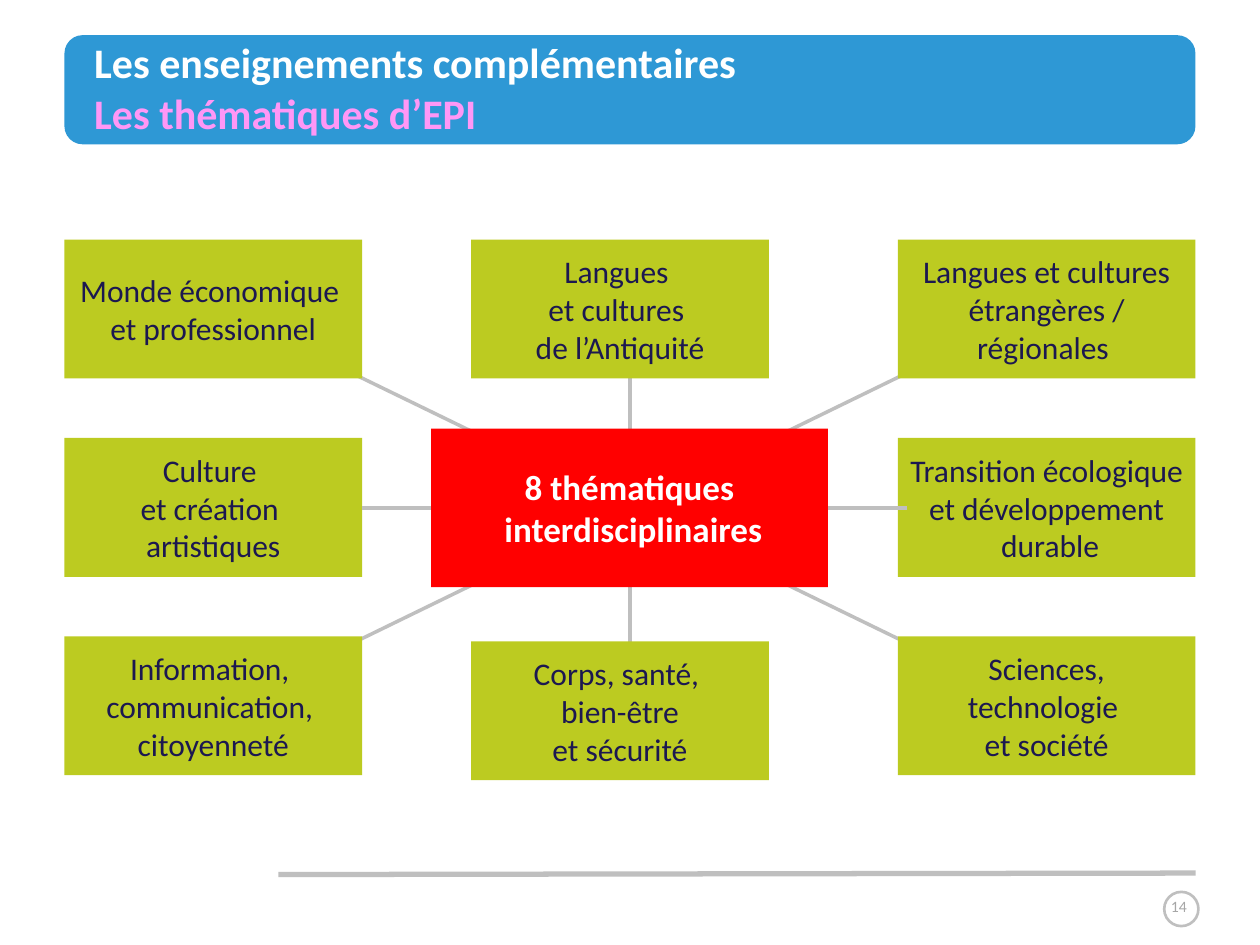
from lxml.etree import SubElement
from pptx import Presentation
from pptx.dml.color import RGBColor
from pptx.enum.shapes import MSO_CONNECTOR, MSO_SHAPE
from pptx.enum.text import MSO_ANCHOR, PP_ALIGN
from pptx.oxml.ns import qn
from pptx.util import Cm, Pt

THEME = {
    "font": "Calibri",
    "banner": "2E98D5", "topic": "BCCB21", "hub": "FF0000", "line": "BFBFBF",
    "white": "FFFFFF", "pink": "FF97F6", "navy": "1C1850", "grey": "A6A6A6",
    "title_pt": 24, "hub_pt": 20, "topic_pt": 18, "number_pt": 9,
}

# "\n" starts a paragraph, "\v" breaks a line
TITLE = [("Les enseignements complémentaires", "white"),
         ("Les thématiques d’EPI", "pink")]
HUB = "8 thématiques\n interdisciplinaires"
TOPICS = [
    ["Monde économique \net professionnel",
     "Langues \vet cultures \nde l’Antiquité",
     "Langues et cultures\nétrangères / régionales "],
    ["Culture \vet création \nartistiques",
     None,
     "Transition écologique et développement\n durable"],
    ["Information, \ncommunication, \ncitoyenneté",
     "Corps, santé, \nbien-être\vet sécurité",
     "Sciences, technologie \vet société"],
]
NUMBER = "14"

# All lengths in cm
LEFT, RIGHT, TOP = 1.3, 24.1, 4.83
BOX_W, BOX_H, ROW_STEP = 6, 2.8, 4
COLS = [LEFT, 9.5, RIGHT - BOX_W]
BOTTOM_MIDDLE_DROP = 0.1
HUB_BOX = (8.69, 8.64, 8, 3.2)
BACK_SPOKES = [(7.09, 7.52, 18.69, 13.16), (18.69, 7.32, 6.71, 13.16),
               (12.7, 6.05, 12.7, 14.25)]
FRONT_SPOKE = (18.29, 10.24, 7.3, 10.24)


def color(name):
    return RGBColor.from_string(THEME[name])


def style(font, size, hue, bold=False):
    fmt = {"name": THEME["font"], "size": Pt(THEME[size]), "bold": bold}
    for attr, value in fmt.items():
        setattr(font, attr, value)
    font.color.rgb = color(hue)


def add_box(s, kind, box, fill=None, line_pt=None):
    sp = s.shapes.add_shape(kind, *map(Cm, box))
    sp.shadow.inherit = False
    if fill:
        sp.fill.solid()
        sp.fill.fore_color.rgb = color(fill)
    else:
        sp.fill.background()
    if line_pt:
        sp.line.color.rgb = color("line")
        sp.line.width = Pt(line_pt)
    else:
        sp.line.fill.background()
    return sp


def add_line(s, ends, width):
    ln = s.shapes.add_connector(MSO_CONNECTOR.STRAIGHT, *map(Cm, ends))
    ln.line.color.rgb = color("line")
    ln.line.width = Pt(width)
    SubElement(ln._element.spPr, qn("a:effectLst"))
    return ln


def write(sp, text, size, hue, bold=False):
    tf = sp.text_frame
    tf.word_wrap = True
    tf.vertical_anchor = MSO_ANCHOR.MIDDLE
    tf.text = text
    for p in tf.paragraphs:
        p.alignment = PP_ALIGN.CENTER
        for r in p.runs:
            style(r.font, size, hue, bold)
    return tf


def add_frame(s):
    """Banner, title, footer rule and page number."""
    add_box(s, MSO_SHAPE.ROUNDED_RECTANGLE, (LEFT, 0.71, RIGHT - LEFT, 2.2), "banner")
    add_line(s, (5.61, 17.63, RIGHT, 17.6), 3)
    add_box(s, MSO_SHAPE.OVAL, (23.47, 17.98, 0.69, 0.69), line_pt=1.5)
    number = s.shapes.add_textbox(*map(Cm, (22.85, 17.93, 1.83, 0.69)))
    write(number, NUMBER, "number_pt", "grey")

    tf = s.shapes.add_textbox(*map(Cm, (1.9, 0.46, 22.2, 2.59))).text_frame
    tf.word_wrap = True
    tf.vertical_anchor = MSO_ANCHOR.MIDDLE
    for side in ("left", "top", "right", "bottom"):
        setattr(tf, f"margin_{side}", 0)
    p = tf.paragraphs[0]
    for i, (text, hue) in enumerate(TITLE):
        if i:
            p.add_line_break()
        r = p.add_run()
        r.text = text
        style(r.font, "title_pt", hue, bold=True)


def add_topics(s):
    for row, texts in enumerate(TOPICS):
        for col, text in enumerate(texts):
            if text is None:
                continue
            y = TOP + row * ROW_STEP
            if (row, col) == (2, 1):
                y += BOTTOM_MIDDLE_DROP
            sp = add_box(s, MSO_SHAPE.RECTANGLE, (COLS[col], y, BOX_W, BOX_H), "topic")
            tf = write(sp, text, "topic_pt", "navy")
            if (row, col) == (1, 2):
                tf.margin_left = tf.margin_right = Cm(0.1)


def main():
    prs = Presentation()
    prs.slide_width, prs.slide_height = Cm(25.4), Cm(19.05)
    s = prs.slides.add_slide(prs.slide_layouts[6])
    add_frame(s)
    for ends in BACK_SPOKES:
        add_line(s, ends, 2)
    add_topics(s)
    add_line(s, FRONT_SPOKE, 2)
    hub = add_box(s, MSO_SHAPE.RECTANGLE, HUB_BOX, "hub")
    write(hub, HUB, "hub_pt", "white", bold=True)
    prs.save("out.pptx")


if __name__ == "__main__":
    main()
